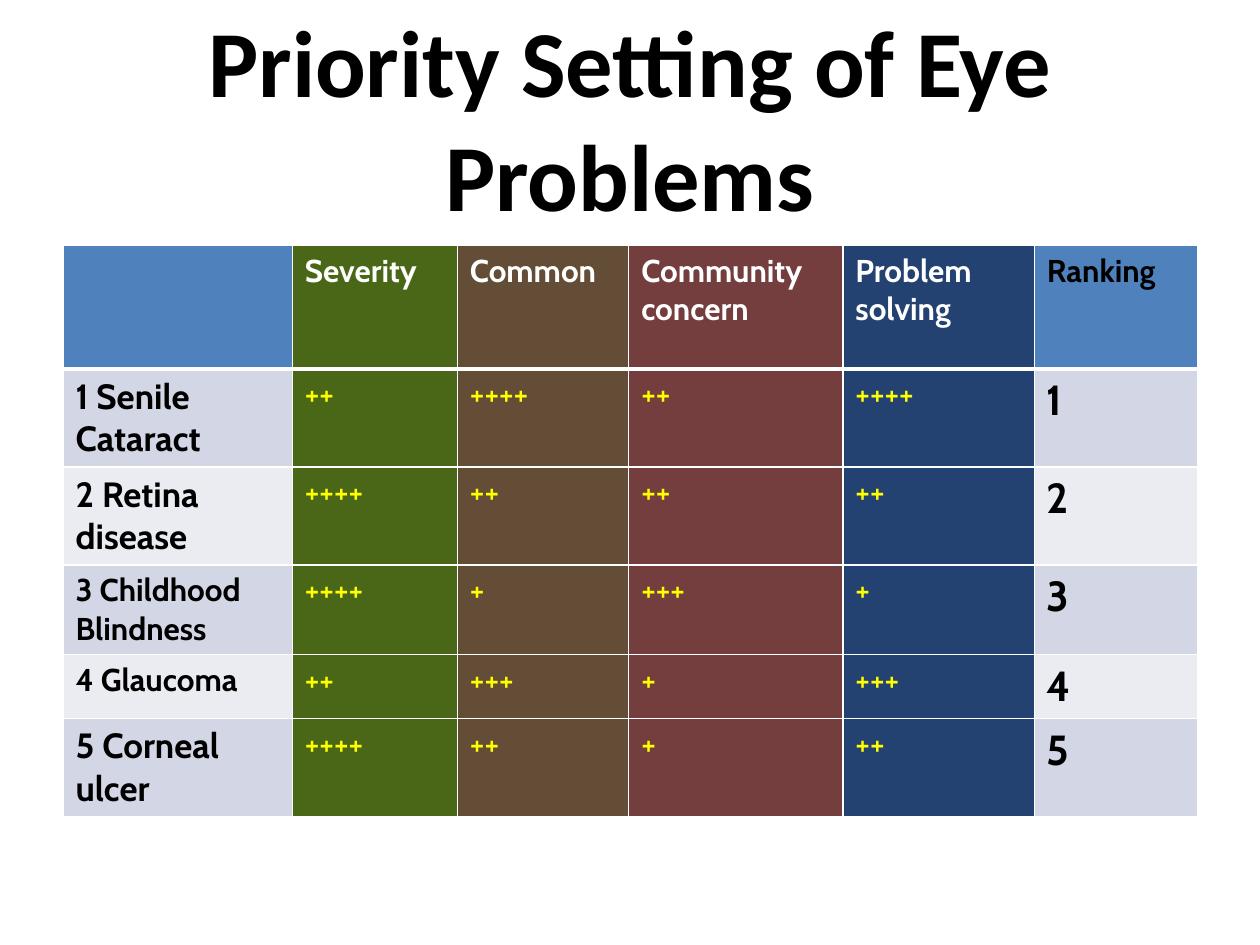
from dataclasses import dataclass

from lxml.etree import SubElement
from pptx import Presentation
from pptx.dml.color import RGBColor
from pptx.enum.text import MSO_ANCHOR, MSO_AUTO_SIZE, PP_ALIGN
from pptx.oxml.ns import qn
from pptx.util import Inches, Pt

WHITE = RGBColor(0xFF, 0xFF, 0xFF)
BLACK = RGBColor(0x00, 0x00, 0x00)
YELLOW = RGBColor(0xFF, 0xFF, 0x00)
BLUE = RGBColor(0x4F, 0x81, 0xBD)
GREEN = RGBColor(0x4A, 0x67, 0x17)
BROWN = RGBColor(0x63, 0x4D, 0x36)
RED = RGBColor(0x75, 0x3E, 0x3E)
NAVY = RGBColor(0x23, 0x42, 0x71)
BANDS = (RGBColor(0xD2, 0xD6, 0xE5), RGBColor(0xEA, 0xEC, 0xF2))


@dataclass
class Column:
    head: str
    width: float
    fill: RGBColor
    ink: RGBColor = WHITE


@dataclass
class Problem:
    name: str
    size: int
    height: float
    scores: tuple[int, ...]


HEAD_HEIGHT = 0.98
COLUMNS = [
    Column("", 1.82, BLUE),
    Column("Severity", 1.31, GREEN),
    Column("Common", 1.36, BROWN),
    Column("Community concern", 1.7, RED),
    Column("Problem solving", 1.52, NAVY),
    Column("Ranking", 1.3, BLUE, BLACK),
]
PROBLEMS = [
    Problem("Senile Cataract", 20, 0.77, (2, 4, 2, 4)),
    Problem("Retina disease", 20, 0.77, (4, 2, 2, 2)),
    Problem("Childhood Blindness", 18, 0.7, (4, 1, 3, 1)),
    Problem("Glaucoma", 18, 0.5, (2, 3, 1, 3)),
    Problem("Corneal ulcer", 20, 0.77, (4, 2, 1, 2)),
]


def style(run, font: str, size: int, ink: RGBColor, bold: bool) -> None:
    run.font.name = font
    run.font.size = Pt(size)
    run.font.color.rgb = ink
    run.font.bold = bold


def border(cell, top: int, bottom: int) -> None:
    props = cell._tc.get_or_add_tcPr()
    for side, width in (("L", 1), ("R", 1), ("T", top), ("B", bottom)):
        line = SubElement(props, qn(f"a:ln{side}"), w=str(Pt(width)))
        fill = SubElement(line, qn("a:solidFill"))
        SubElement(fill, qn("a:srgbClr"), val=str(WHITE))


def fill_cell(cell, text: str, fill: RGBColor, ink: RGBColor,
              size: int = 18, bold: bool = True) -> None:
    cell.fill.solid()
    cell.fill.fore_color.rgb = fill
    cell.text_frame.text = text
    for run in cell.text_frame.paragraphs[0].runs:
        style(run, "Cabin", size, ink, bold)


def add_title(slide) -> None:
    title = slide.shapes.title
    title.left, title.top = Inches(0.5), Inches(0.3)
    title.width, title.height = Inches(9), Inches(1.25)
    frame = title.text_frame
    frame.text = "Priority Setting of Eye Problems"
    frame.auto_size = MSO_AUTO_SIZE.NONE
    frame.vertical_anchor = MSO_ANCHOR.MIDDLE
    line = frame.paragraphs[0]
    line.alignment = PP_ALIGN.CENTER
    style(line.runs[0], "Calibri", 54, BLACK, True)


def add_grid(slide) -> None:
    heights = [HEAD_HEIGHT] + [item.height for item in PROBLEMS]
    table = slide.shapes.add_table(
        len(heights), len(COLUMNS), Inches(0.5), Inches(1.95),
        Inches(9), Inches(sum(heights))).table
    for row, height in zip(table.rows, heights):
        row.height = Inches(height)

    # Header row, with a thick rule below it
    for index, column in enumerate(COLUMNS):
        table.columns[index].width = Inches(column.width)
        for row in range(len(heights)):
            border(table.cell(row, index), 3 if row == 1 else 1,
                   3 if row == 0 else 1)
        fill_cell(table.cell(0, index), column.head, column.fill, column.ink)

    # Problem name, scores and rank
    last = len(COLUMNS) - 1
    for rank, item in enumerate(PROBLEMS, 1):
        band = BANDS[(rank - 1) % 2]
        fill_cell(table.cell(rank, 0), f"{rank} {item.name}", band, BLACK,
                  item.size)
        for index, score in enumerate(item.scores, 1):
            fill_cell(table.cell(rank, index), "+" * score,
                      COLUMNS[index].fill, YELLOW, bold=False)
        fill_cell(table.cell(rank, last), str(rank), band, BLACK, 24)


def main() -> None:
    deck = Presentation()
    deck.slide_width, deck.slide_height = Inches(10), Inches(7.5)
    slide = deck.slides.add_slide(deck.slide_layouts[5])
    add_title(slide)
    add_grid(slide)
    deck.save("out.pptx")


if __name__ == "__main__":
    main()
